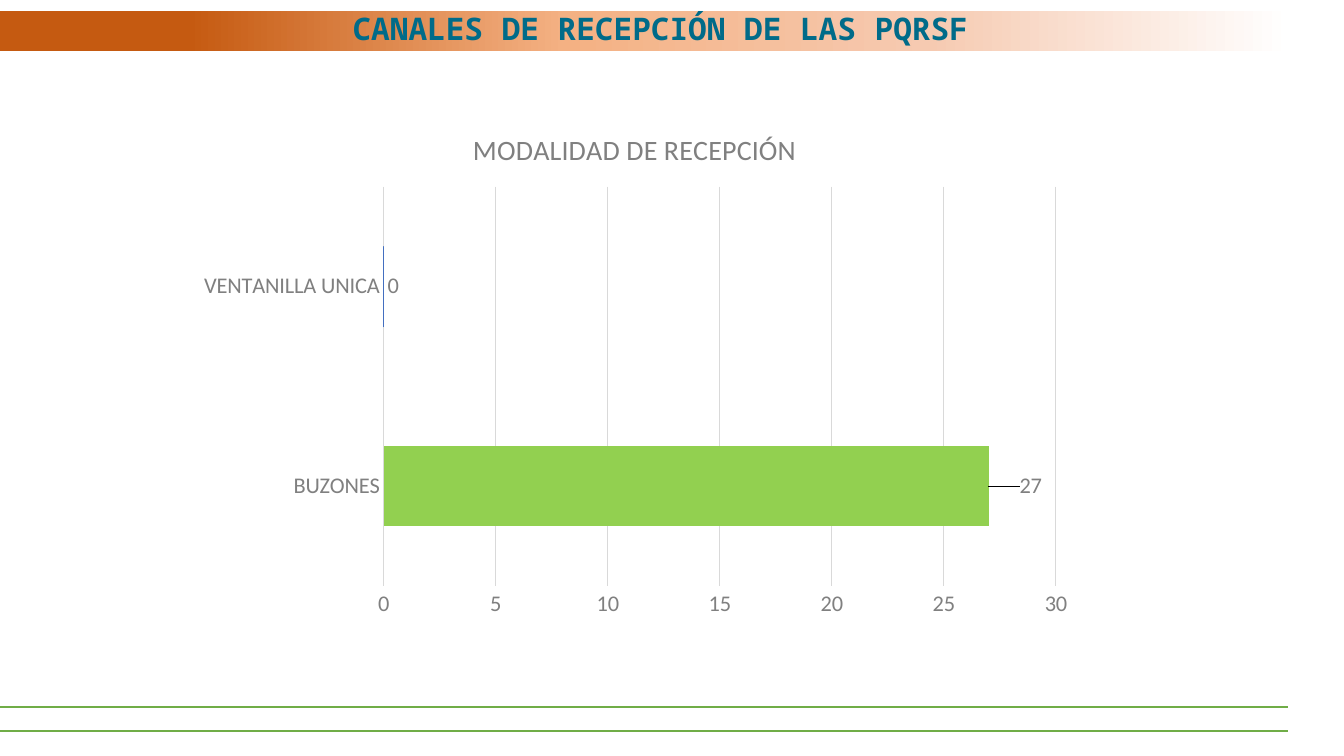
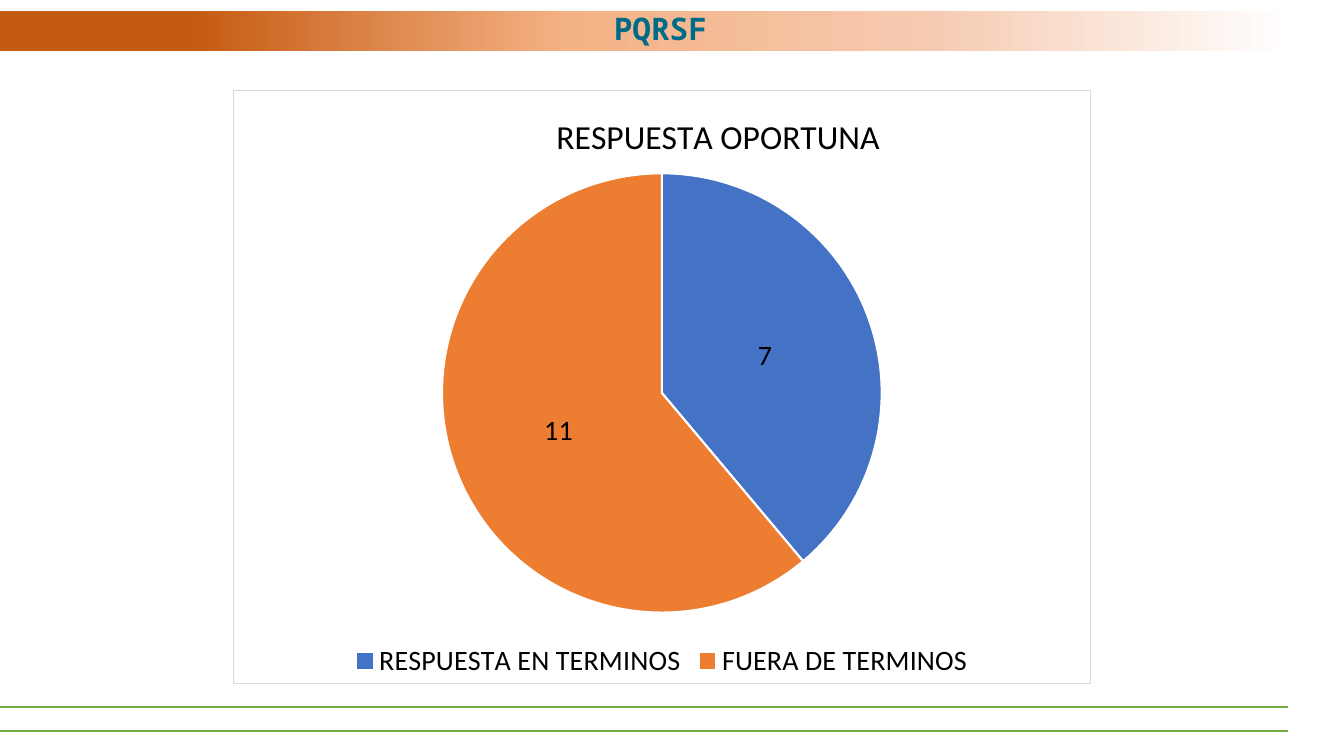
from copy import deepcopy

from pptx import Presentation
from pptx.chart.data import CategoryChartData
from pptx.dml.color import RGBColor
from pptx.enum.chart import (XL_CHART_TYPE, XL_LABEL_POSITION, XL_LEGEND_POSITION,
                             XL_TICK_MARK)
from pptx.enum.shapes import MSO_CONNECTOR, MSO_SHAPE
from pptx.enum.text import MSO_ANCHOR, MSO_AUTO_SIZE, PP_ALIGN
from pptx.oxml import parse_xml
from pptx.oxml.ns import nsdecls, qn
from pptx.util import Inches, Pt

# Content
CHANNELS = {
    "heading": "CANALES DE RECEPCIÓN DE LAS PQRSF",
    "chart_title": "MODALIDAD DE RECEPCIÓN",
    "values": {"BUZONES": 27, "VENTANILLA UNICA": 0},
}
ANSWERS = {
    "heading": "PQRSF",
    "chart_title": "RESPUESTA OPORTUNA",
    "values": {"RESPUESTA EN TERMINOS": 7, "FUERA DE TERMINOS": 11},
}

# Shared style
WIDTH, HEIGHT = Inches(13.33), Inches(7.5)
BAND_TOP, BAND_HEIGHT = Inches(0.11), Inches(0.4)
RULE_RIGHT, RULE_TOPS = Inches(12.77), (Inches(7.01), Inches(7.25))
HEADING_FONT, CHART_FONT = "Noto Sans Mono", "Calibri"
TEAL = RGBColor(0x00, 0x6B, 0x89)
GREEN = RGBColor(0x70, 0xAD, 0x47)
LIME = RGBColor(0x92, 0xD0, 0x50)
BLUE = RGBColor(0x44, 0x72, 0xC4)
BAR_EDGE = RGBColor(0x43, 0x6F, 0xC0)
ORANGE = RGBColor(0xED, 0x7D, 0x31)
GRAY = RGBColor(0x80, 0x80, 0x80)
PALE_GRAY = RGBColor(0xD9, 0xD9, 0xD9)
BLACK = RGBColor(0, 0, 0)
WHITE = RGBColor(0xFF, 0xFF, 0xFF)
BAND_STOPS = [(0.14, RGBColor(0xC5, 0x5A, 0x11)), (0.42, RGBColor(0xF4, 0xB1, 0x83)),
              (0.69, RGBColor(0xF6, 0xCA, 0xB1)), (0.96, WHITE)]
BAR_STOPS = [(0, RGBColor(0xA8, 0xB7, 0xDF)), (1, RGBColor(0x88, 0x9E, 0xD7))]


def set_stops(fill, stops, angle):
    fill.gradient_angle = angle
    for stop, (position, color) in zip(fill.gradient_stops, stops):
        stop.color.rgb = color
        stop.position = position


def set_font(font, size, color, name=CHART_FONT, bold=False):
    font.size, font.name, font.bold = Pt(size), name, bold
    font.color.rgb = color


def place(part, index, **settings):
    """Give a chart part a manual layout, as shares of the chart."""
    for old in part.findall(qn("c:layout")):
        part.remove(old)
    fields = "".join(f'<c:{key} val="{value}"/>' for key, value in settings.items())
    part.insert(index, parse_xml(
        f'<c:layout {nsdecls("c")}><c:manualLayout>{fields}</c:manualLayout></c:layout>'))


def dress_layout(layout, slide):
    """Move the band and the rules to the layout and set its title."""
    for holder in list(layout.placeholders)[1:]:
        holder.element.getparent().remove(holder.element)
    band = slide.shapes.add_shape(MSO_SHAPE.RECTANGLE, 0, BAND_TOP, WIDTH, BAND_HEIGHT)
    band.shadow.inherit = False
    band.line.fill.background()
    band.fill.gradient()
    stop_list = next(band.element.iter(qn("a:gsLst")))
    while len(stop_list) < len(BAND_STOPS):
        stop_list.append(deepcopy(stop_list[0]))
    set_stops(band.fill, BAND_STOPS, 0)
    decor = [band]
    for top in RULE_TOPS:
        rule = slide.shapes.add_connector(MSO_CONNECTOR.STRAIGHT, RULE_RIGHT, top, 0, top)
        rule.line.color.rgb, rule.line.width = GREEN, Pt(1.5)
        rule.element.spPr.append(parse_xml(f'<a:effectLst {nsdecls("a")}/>'))
        decor.append(rule)
    title = layout.placeholders[0]
    for shape in decor:
        title.element.addprevious(shape.element)
    title.left, title.top = Inches(0.32), BAND_TOP
    title.width, title.height = Inches(12.46), BAND_HEIGHT
    title.text_frame.vertical_anchor = MSO_ANCHOR.TOP
    title.text_frame.auto_size = MSO_AUTO_SIZE.NONE


def add_topic(slide, topic, kind, box, title_size, title_color):
    """Write the heading and add the chart with its title."""
    slide.shapes.title.text_frame.text = topic["heading"]
    heading = slide.shapes.title.text_frame.paragraphs[0]
    heading.alignment, heading.line_spacing = PP_ALIGN.CENTER, 0.8
    set_font(heading.runs[0].font, 22.2, TEAL, HEADING_FONT, True)

    data = CategoryChartData()
    data.categories = list(topic["values"])
    data.add_series("Series 1", list(topic["values"].values()))
    chart = slide.shapes.add_chart(kind, *map(Inches, box), data).chart
    chart.has_title = True
    chart.chart_title.include_in_layout = False
    chart.chart_title.text_frame.text = topic["chart_title"]
    run = chart.chart_title.text_frame.paragraphs[0].runs[0]
    set_font(run.font, title_size, title_color)
    return chart


def place_plot(chart, x, y, w, h):
    plot_area = next(chart.element.iter(qn("c:plotArea")))
    place(plot_area, 0, layoutTarget="inner", xMode="edge", yMode="edge",
          x=x, y=y, w=w, h=h)


def show_values(plot, size, color):
    plot.has_data_labels = True
    plot.data_labels.show_value = True
    set_font(plot.data_labels.font, size, color)
    return plot.data_labels


def add_channels(slide):
    chart = add_topic(slide, CHANNELS, XL_CHART_TYPE.BAR_CLUSTERED,
                      (1.85, 1.08, 8.89, 5.15), 20, GRAY)
    chart.has_legend = False
    set_font(chart.font, 16, BLACK)
    place_plot(chart, 0.22, 0.15, 0.75, 0.77)
    for axis in (chart.category_axis, chart.value_axis):
        axis.major_tick_mark = axis.minor_tick_mark = XL_TICK_MARK.NONE
        axis.format.line.fill.background()
        set_font(axis.tick_labels.font, 16, GRAY)
    scale = chart.value_axis
    scale.minimum_scale, scale.maximum_scale, scale.major_unit = 0, 30, 5
    scale.has_major_gridlines = True
    scale.major_gridlines.format.line.color.rgb = PALE_GRAY
    scale.major_gridlines.format.line.width = Pt(0.75)

    plot = chart.plots[0]
    plot.gap_width, plot.vary_by_categories = 150, False
    show_values(plot, 16, GRAY).position = XL_LABEL_POSITION.OUTSIDE_END
    bars = plot.series[0]
    bars.format.fill.gradient()
    set_stops(bars.format.fill, BAR_STOPS, 270)
    bars.format.line.color.rgb, bars.format.line.width = BAR_EDGE, Pt(0.75)
    mailboxes = bars.points[0]
    mailboxes.format.fill.solid()
    mailboxes.format.fill.fore_color.rgb = LIME
    mailboxes.format.line.fill.background()

    # Series labels, with the first one moved away from its bar
    labels = bars.data_labels
    labels.show_value, labels.position = True, XL_LABEL_POSITION.OUTSIDE_END
    set_font(labels.font, 16, GRAY)
    set_font(mailboxes.data_label.font, 16, GRAY)
    mailboxes.data_label.position = XL_LABEL_POSITION.OUTSIDE_END
    place(next(chart.element.iter(qn("c:dLbl"))), 1, x=0.03, y=0)


def add_answers(slide):
    chart = add_topic(slide, ANSWERS, XL_CHART_TYPE.PIE,
                      (2.31, 0.89, 8.51, 5.9), 24, BLACK)
    set_font(chart.font, 20, BLACK)
    place_plot(chart, 0.24, 0.14, 0.52, 0.74)
    place(next(chart.element.iter(qn("c:title"))), 1,
          xMode="edge", yMode="edge", x=0.37, y=0.03)
    chart.has_legend = True
    chart.legend.position = XL_LEGEND_POSITION.BOTTOM
    chart.legend.include_in_layout = False
    set_font(chart.legend.font, 20, BLACK)
    chart.element.find(qn("c:chart")).addnext(parse_xml(
        f'<c:spPr {nsdecls("c", "a")}>'
        f'<a:solidFill><a:srgbClr val="{WHITE}"/></a:solidFill>'
        f'<a:ln w="{Pt(0.75)}"><a:solidFill><a:srgbClr val="{PALE_GRAY}"/></a:solidFill>'
        '</a:ln></c:spPr>'))

    plot = chart.plots[0]
    plot.vary_by_categories = True
    show_values(plot, 20, BLACK).position = XL_LABEL_POSITION.CENTER
    plot.data_labels.show_percentage = False
    for index, color in enumerate((BLUE, ORANGE)):
        part = plot.series[0].points[index].format
        part.fill.solid()
        part.fill.fore_color.rgb = color
        part.line.color.rgb, part.line.width = WHITE, Pt(1.5)


def main():
    deck = Presentation()
    deck.slide_width, deck.slide_height = WIDTH, HEIGHT
    layout = deck.slide_layouts[5]
    channels, answers = (deck.slides.add_slide(layout) for _ in range(2))
    dress_layout(layout, channels)
    add_channels(channels)
    add_answers(answers)
    deck.save("out.pptx")


if __name__ == "__main__":
    main()
